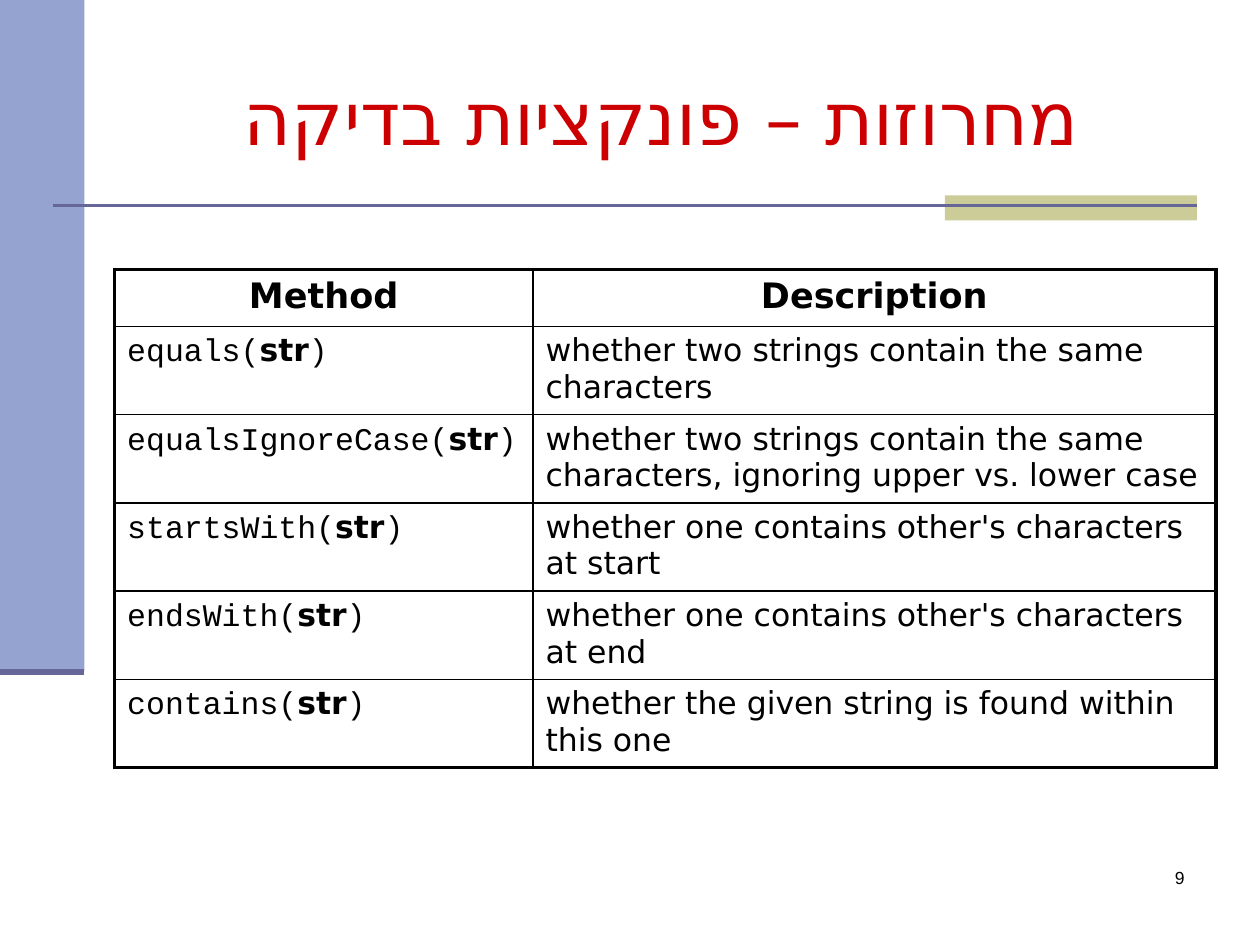
from typing import NamedTuple

from lxml.etree import SubElement
from pptx import Presentation
from pptx.dml.color import RGBColor
from pptx.enum.shapes import MSO_CONNECTOR, MSO_SHAPE
from pptx.enum.text import MSO_ANCHOR, PP_ALIGN
from pptx.oxml.ns import qn
from pptx.util import Inches, Pt

BLACK = RGBColor(0x00, 0x00, 0x00)
RED = RGBColor(0xCC, 0x00, 0x00)
BLUE = RGBColor(0x95, 0xA3, 0xD1)
SAND = RGBColor(0xCC, 0xCC, 0x99)
PURPLE = RGBColor(0x66, 0x66, 0x99)
SANS = "DejaVu Sans"
MONO = "Courier New"


class Block(NamedTuple):
    left: float
    top: float
    width: float
    height: float
    color: RGBColor


class Rule(NamedTuple):
    left: float
    right: float
    y: float
    weight: float


class Method(NamedTuple):
    name: str
    description: str


BLOCKS = [Block(0, 0, 0.67, 5.33, BLUE), Block(7.5, 1.55, 2, 0.2, SAND)]
RULES = [Rule(0.42, 9.5, 1.63, 1.5), Rule(0, 0.67, 5.33, 3.5)]
METHODS = [
    Method("equals", "whether two strings contain the same characters"),
    Method("equalsIgnoreCase",
           "whether two strings contain the same characters, ignoring upper vs. lower case"),
    Method("startsWith", "whether one contains other's characters at start"),
    Method("endsWith", "whether one contains other's characters at end"),
    Method("contains", "whether the given string is found within this one"),
]


def add_text(p, text: str, *, size: float, font: str = SANS, color: RGBColor = BLACK,
             bold: bool = False, align: PP_ALIGN = PP_ALIGN.LEFT):
    p.alignment = align
    r = p.add_run()
    r.text = text
    r.font.size = Pt(size)
    r.font.name = font
    r.font.bold = bold
    r.font.color.rgb = color
    return r


def add_block(s, block: Block) -> None:
    sp = s.shapes.add_shape(MSO_SHAPE.RECTANGLE, *map(Inches, block[:4]))
    sp.shadow.inherit = False
    sp.fill.solid()
    sp.fill.fore_color.rgb = block.color
    sp.line.fill.background()


def add_rule(s, rule: Rule) -> None:
    y = Inches(rule.y)
    line = s.shapes.add_connector(
        MSO_CONNECTOR.STRAIGHT, Inches(rule.left), y, Inches(rule.right), y)
    line.line.color.rgb = PURPLE
    line.line.width = Pt(rule.weight)
    SubElement(line._element.spPr, qn("a:effectLst"))


def add_title(s, text: str) -> None:
    sp = s.shapes.title
    sp.left, sp.top, sp.width, sp.height = map(Inches, (1, 0.3, 8.5, 1.25))
    tf = sp.text_frame
    tf.vertical_anchor = MSO_ANCHOR.MIDDLE
    p = tf.paragraphs[0]
    r = add_text(p, text, size=42, font="Times New Roman", color=RED, align=PP_ALIGN.CENTER)
    p._p.get_or_add_pPr().set("rtl", "1")
    SubElement(r._r.get_or_add_rPr(), qn("a:cs")).set("typeface", SANS)


def format_cell(cell, outer: dict[str, bool]) -> None:
    tcPr = cell._tc.get_or_add_tcPr()
    for side, is_outer in outer.items():
        ln = SubElement(tcPr, qn(f"a:ln{side}"), w=str(Pt(2.25 if is_outer else 1)))
        fill = SubElement(ln, qn("a:solidFill"))
        SubElement(fill, qn("a:srgbClr"), val=str(BLACK))
    cell.fill.background()


def add_methods(s, methods: list[Method]) -> None:
    n_rows = len(methods) + 1
    widths = (3.32, 5.42)
    heights = [0.45] + [0.68] * len(methods)
    table = s.shapes.add_table(n_rows, len(widths), Inches(0.91), Inches(2.14),
                               Inches(sum(widths)), Inches(sum(heights))).table
    table.first_row = table.horz_banding = False
    for col, width in zip(table.columns, widths):
        col.width = Inches(width)
    for row, height in zip(table.rows, heights):
        row.height = Inches(height)
    for i in range(n_rows):
        for j in range(len(widths)):
            format_cell(table.cell(i, j), {
                "L": j == 0, "R": j == len(widths) - 1, "T": i == 0, "B": i == n_rows - 1})
    for j, heading in enumerate(("Method", "Description")):
        add_text(table.cell(0, j).text_frame.paragraphs[0], heading,
                 size=20, bold=True, align=PP_ALIGN.CENTER)
    for i, method in enumerate(methods, 1):
        p = table.cell(i, 0).text_frame.paragraphs[0]
        add_text(p, f"{method.name}(", size=18, font=MONO)
        add_text(p, "str", size=18, bold=True)
        add_text(p, ")", size=18, font=MONO)
        add_text(table.cell(i, 1).text_frame.paragraphs[0], method.description, size=18)


def add_page_number(s, number: int) -> None:
    tf = s.shapes.add_textbox(*map(Inches, (7.42, 6.83, 2.08, 0.5))).text_frame
    tf.word_wrap = True
    add_text(tf.paragraphs[0], str(number), size=10, font="Arial", align=PP_ALIGN.RIGHT)


def main() -> None:
    prs = Presentation()
    prs.slide_width, prs.slide_height = Inches(10), Inches(7.5)
    s = prs.slides.add_slide(prs.slide_layouts[5])
    for block in BLOCKS:
        add_block(s, block)
    for rule in RULES:
        add_rule(s, rule)
    add_title(s, "מחרוזות – פונקציות בדיקה")
    add_page_number(s, 9)
    add_methods(s, METHODS)
    prs.save("out.pptx")


if __name__ == "__main__":
    main()
